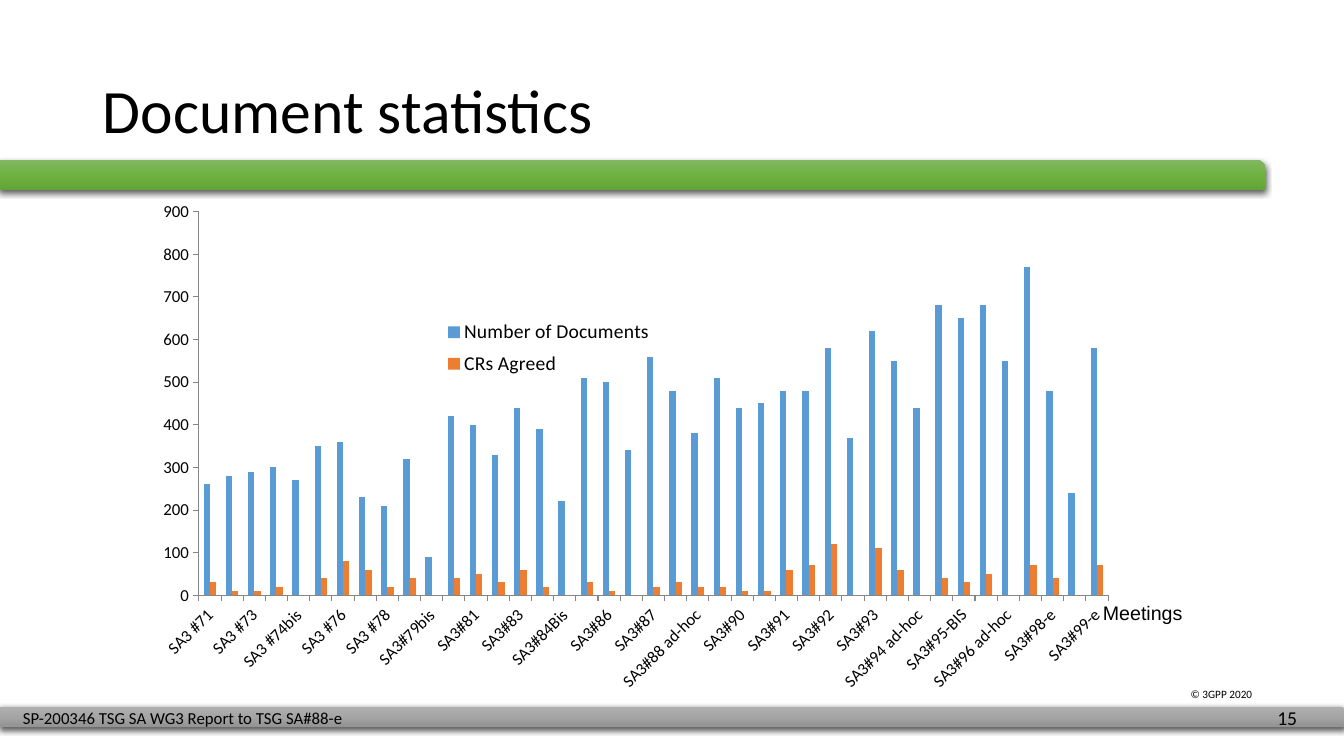
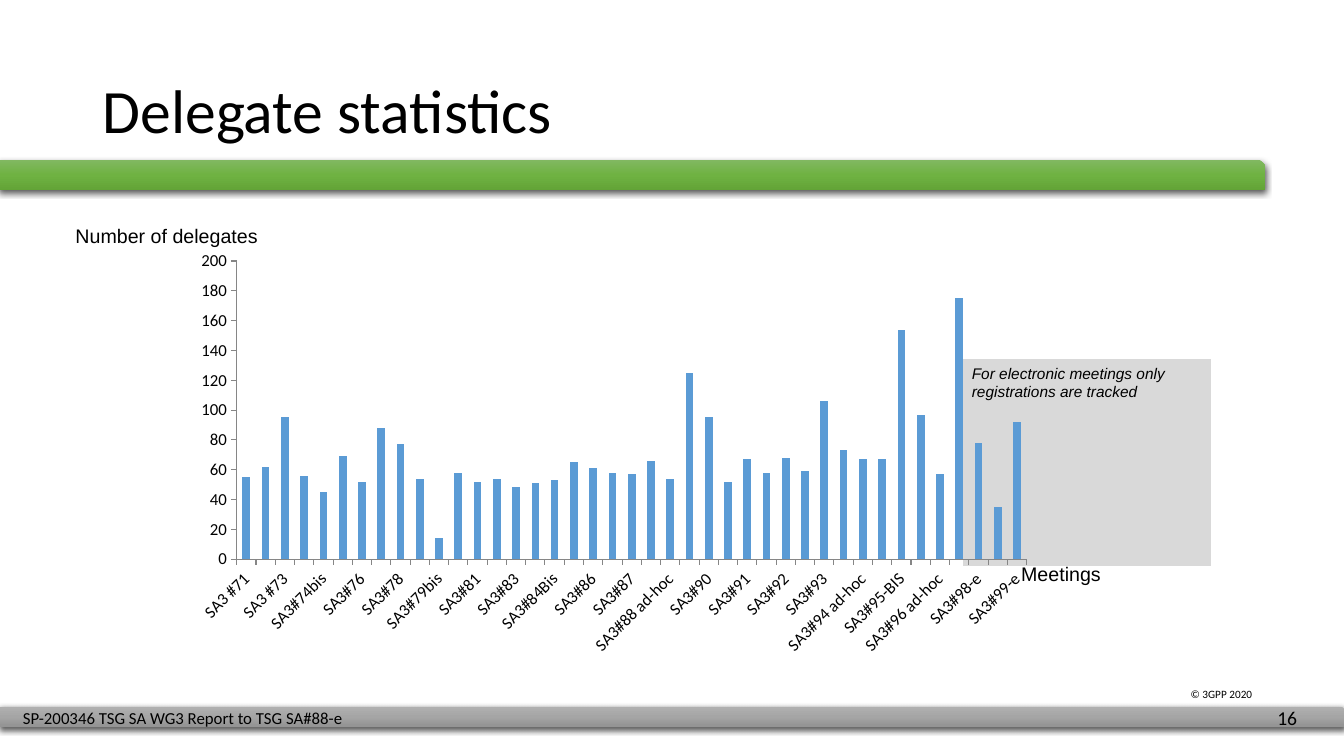
import lxml.etree
import pptx
import pptx.chart.data
import pptx.dml.color
import pptx.enum.chart
import pptx.enum.shapes
import pptx.enum.text
import pptx.oxml
import pptx.oxml.ns
import pptx.util

PX = 9144
BLACK = "000000"
WHITE = "FFFFFF"
AXIS_GREY = "868686"
PANEL_GREY = "D9D9D9"
BLUE = "5B9BD5"
ORANGE = "ED7D31"
GREEN_BAND = ("81B861", "6FB242", "62A336")
GREY_BAND = ("AFAFAF", "A5A5A5", "939393")
BODY_FONT = "Calibri"
LABEL_FONT = "Arial"
FOOTER = "SP-200346 TSG SA WG3 Report to TSG SA#88-e"
COPYRIGHT = "© 3GPP 2020"

DOCUMENT_EARLY = [
    "SA3 #71", "SA# #72", "SA3 #73", "SA3 #74", "SA3 #74bis", "SA3 #75",
    "SA3 #76", "SA3 #77", "SA3 #78", "SA3 #79", "SA3#79bis", "SA3 #80",
]
DELEGATE_EARLY = [
    "SA3 #71", "SA3 #72", "SA3 #73", "SA3#74", "SA3#74bis", "SA3#75",
    "SA3#76", "SA3#77", "SA3#78", "SA3#79", "SA3#79bis", "SA3#80",
]
LATER_MEETINGS = [
    "SA3#81", "SA3#82", "SA3#83", "SA3#84", "SA3#84Bis", "SA3#85", "SA3#86",
    "SA3#86 ad-hoc", "SA3#87", "SA3#88", "SA3#88 ad-hoc", "SA3#89", "SA3#90",
    "SA3#90Bis", "SA3#91", "SA3#91Bis", "SA3#92", "SA3#92 ad-hoc", "SA3#93",
    "SA3#94", "SA3#94 ad-hoc", "SA3#95", "SA3#95-BIS", "SA3#96",
    "SA3#96 ad-hoc", "SA3#97", "SA3#98-e", "SA3#98bis-e", "SA3#99-e",
]
DOCUMENTS = [
    260, 280, 290, 300, 270, 350, 360, 230, 210, 320, 90, 420, 400, 330,
    440, 390, 220, 510, 500, 340, 560, 480, 380, 510, 440, 450, 480, 480,
    580, 370, 620, 550, 440, 680, 650, 680, 550, 770, 480, 240, 580,
]
AGREED = [
    30, 10, 10, 20, 0, 40, 80, 60, 20, 40, 0, 40, 50, 30, 60, 20, 0, 30,
    10, 0, 20, 30, 20, 20, 10, 10, 60, 70, 120, 0, 110, 60, 0, 40, 30, 50,
    0, 70, 40, 0, 70,
]
DELEGATES = [
    55, 62, 95, 56, 45, 69, 52, 88, 77, 54, 14, 58, 52, 54, 48, 51, 53, 65,
    61, 58, 57, 66, 54, 125, 95, 52, 67, 58, 68, 59, 106, 73, 67, 67, 154,
    97, 57, 175, 78, 35, 92,
]


def color(value):
    return pptx.dml.color.RGBColor.from_string(value)


def scaled(box):
    return [length * PX for length in box]


def add_child(parent, tag, **attributes):
    child = lxml.etree.SubElement(parent, pptx.oxml.ns.qn(tag))
    for name, value in attributes.items():
        child.set(name, str(value))
    return child


def format_font(font, size, name=BODY_FONT, italic=False):
    font.size = pptx.util.Pt(size)
    font.name = name
    font.italic = italic
    font.color.rgb = color(BLACK)


def add_text(slide, box, text, size, name=BODY_FONT, wrap=True, italic=False):
    frame = slide.shapes.add_textbox(*scaled(box)).text_frame
    frame.word_wrap = wrap
    frame.auto_size = pptx.enum.text.MSO_AUTO_SIZE.SHAPE_TO_FIT_TEXT
    run = frame.paragraphs[0].add_run()
    run.text = text
    format_font(run.font, size, name, italic)


def add_band(slide, box, colors):
    band = slide.shapes.add_shape(
        pptx.enum.shapes.MSO_SHAPE.SNIP_1_RECTANGLE, *scaled(box))
    band.line.fill.background()
    band.fill.gradient()
    band.fill.gradient_angle = 270
    properties = band.element.spPr
    stops = properties.find(".//" + pptx.oxml.ns.qn("a:gsLst"))
    for stop in list(stops):
        stops.remove(stop)
    for position, value in zip((0, 50000, 100000), colors):
        add_child(add_child(stops, "a:gs", pos=position), "a:srgbClr", val=value)
    band.shadow.inherit = False
    effects = properties.find(pptx.oxml.ns.qn("a:effectLst"))
    shadow = add_child(effects, "a:outerShdw", blurRad=57150, dist=19050,
                       dir=5400000, algn="ctr", rotWithShape=0)
    add_child(add_child(shadow, "a:srgbClr", val=BLACK), "a:alpha", val=63000)


def add_panel(slide, box, text):
    panel = slide.shapes.add_shape(
        pptx.enum.shapes.MSO_SHAPE.RECTANGLE, *scaled(box))
    panel.shadow.inherit = False
    panel.fill.solid()
    panel.fill.fore_color.rgb = color(PANEL_GREY)
    panel.line.color.rgb = color(WHITE)
    panel.line.width = pptx.util.Pt(1)
    left, top, width, height = box
    add_text(slide, (left, top, width, 47), text, 11, LABEL_FONT, italic=True)


def manual_layout(box, inner=False):
    layout = pptx.oxml.parse_xml(
        "<c:layout %s/>" % pptx.oxml.ns.nsdecls("c"))
    manual = add_child(layout, "c:manualLayout")
    if inner:
        add_child(manual, "c:layoutTarget", val="inner")
    add_child(manual, "c:xMode", val="edge")
    add_child(manual, "c:yMode", val="edge")
    for name, value in zip("xywh", box):
        add_child(manual, "c:" + name, val=value)
    return layout


def remove_layout(parent):
    for layout in parent.findall(pptx.oxml.ns.qn("c:layout")):
        parent.remove(layout)


def clear_background():
    properties = pptx.oxml.parse_xml(
        "<c:spPr %s/>" % pptx.oxml.ns.nsdecls("c", "a"))
    add_child(properties, "a:noFill")
    add_child(add_child(properties, "a:ln"), "a:noFill")
    return properties


def format_axis(axis):
    axis.has_major_gridlines = False
    axis.major_tick_mark = pptx.enum.chart.XL_TICK_MARK.OUTSIDE
    axis.minor_tick_mark = pptx.enum.chart.XL_TICK_MARK.NONE
    axis.format.line.color.rgb = color(AXIS_GREY)
    axis.format.line.width = pptx.util.Pt(0.75)
    format_font(axis.tick_labels.font, 12)


def add_column_chart(slide, box, categories, series, plot_box, maximum, step):
    data = pptx.chart.data.CategoryChartData()
    data.categories = categories
    for name, values, fill in series:
        data.add_series(name, values)
    chart = slide.shapes.add_chart(
        pptx.enum.chart.XL_CHART_TYPE.COLUMN_CLUSTERED, *scaled(box), data).chart
    chart.has_title = False
    chart.has_legend = False
    format_font(chart.font, 18)
    plot = chart.plots[0]
    plot.gap_width = 150
    plot.overlap = 0
    plot.vary_by_categories = False
    for column, (name, values, fill) in zip(plot.series, series):
        column.invert_if_negative = False
        column.format.fill.solid()
        column.format.fill.fore_color.rgb = color(fill)
    format_axis(chart.category_axis)
    format_axis(chart.value_axis)
    chart.value_axis.minimum_scale = 0
    chart.value_axis.maximum_scale = maximum
    chart.value_axis.major_unit = step
    space = chart.element
    body = space.find(".//%s/%s/%s" % tuple(
        pptx.oxml.ns.qn(tag) for tag in ("c:catAx", "c:txPr", "a:bodyPr")))
    body.set("rot", "-2700000")
    body.set("vert", "horz")
    area = space.find(".//" + pptx.oxml.ns.qn("c:plotArea"))
    remove_layout(area)
    area.insert(0, manual_layout(plot_box, inner=True))
    area.append(clear_background())
    space.find(pptx.oxml.ns.qn("c:chart")).addnext(clear_background())
    return chart


def add_legend(chart, box):
    chart.has_legend = True
    legend = chart.legend
    legend.position = pptx.enum.chart.XL_LEGEND_POSITION.RIGHT
    legend.include_in_layout = False
    format_font(legend.font, 14)
    element = chart.element.find(".//" + pptx.oxml.ns.qn("c:legend"))
    remove_layout(element)
    position = element.find(pptx.oxml.ns.qn("c:legendPos"))
    position.addnext(manual_layout(box))


def add_statistics_slide(presentation, title_text, number):
    slide = presentation.slides.add_slide(presentation.slide_layouts[5])
    add_band(slide, (0, 701, 1334, 20), GREY_BAND)
    add_band(slide, (-1, 159, 1256, 30), GREEN_BAND)
    add_text(slide, (1171, 677, 108, 23), COPYRIGHT, 8)
    add_text(slide, (1257, 695, 43, 34), str(number), 14, wrap=False)
    add_text(slide, (13, 697, 440, 30), FOOTER, 12)
    title = slide.shapes.title
    title.left, title.top, title.width, title.height = scaled((92, 40, 1150, 145))
    frame = title.text_frame
    frame.vertical_anchor = pptx.enum.text.MSO_ANCHOR.MIDDLE
    paragraph = frame.paragraphs[0]
    paragraph.alignment = pptx.enum.text.PP_ALIGN.LEFT
    paragraph.line_spacing = 0.9
    run = paragraph.add_run()
    run.text = title_text
    format_font(run.font, 44)
    return slide


def add_axis_label(slide, box, text):
    add_text(slide, box, text, 14, LABEL_FONT, wrap=False)


def add_document_slide(presentation):
    slide = add_statistics_slide(presentation, "Document statistics", 15)
    add_axis_label(slide, (1084, 591, 100, 34), "Meetings")
    series = [("Number of Documents", DOCUMENTS, BLUE),
              ("CRs Agreed", AGREED, ORANGE)]
    chart = add_column_chart(
        slide, (118, 185, 991, 501), DOCUMENT_EARLY + LATER_MEETINGS, series,
        (0.08, 0.05, 0.91, 0.76), 900, 100)
    add_legend(chart, (0.3, 0.25, 0.26, 0.14))


def add_delegate_slide(presentation):
    slide = add_statistics_slide(presentation, "Delegate statistics", 16)
    add_panel(slide, (954, 356, 248, 206),
              "For electronic meetings only registrations are tracked")
    add_axis_label(slide, (65, 217, 202, 34), "Number of delegates")
    add_axis_label(slide, (1003, 553, 100, 34), "Meetings")
    add_column_chart(
        slide, (166, 197, 861, 477), DELEGATE_EARLY + LATER_MEETINGS,
        [("Series 1", DELEGATES, BLUE)], (0.08, 0.13, 0.91, 0.62), 200, 20)


def main():
    presentation = pptx.Presentation()
    presentation.slide_width, presentation.slide_height = scaled((1333, 750))
    add_document_slide(presentation)
    add_delegate_slide(presentation)
    presentation.save("out.pptx")


if __name__ == "__main__":
    main()
